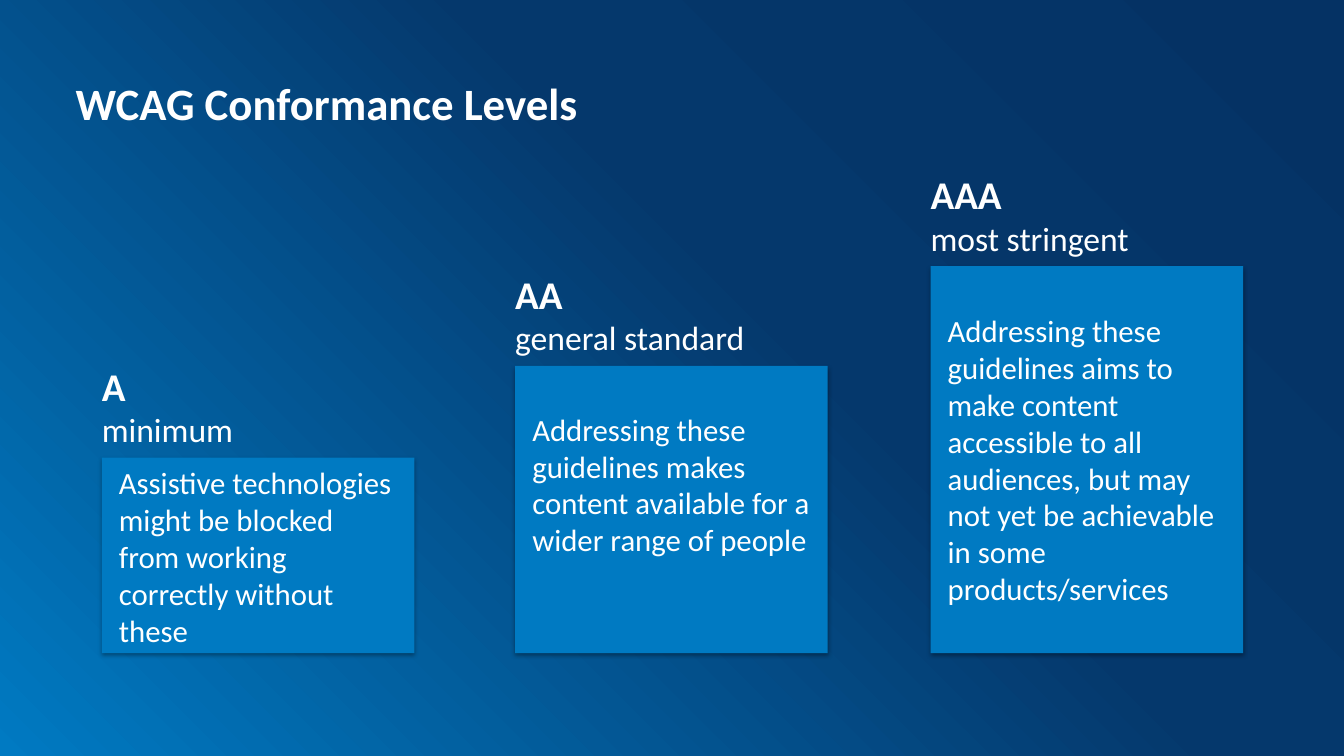
import pptx
import pptx.dml.color
import pptx.enum.shapes
import pptx.enum.text
import pptx.oxml
import pptx.oxml.ns
import pptx.util

Inches = pptx.util.Inches
NAMESPACE = pptx.oxml.ns.nsdecls("a")


def color(value):
    return pptx.dml.color.RGBColor.from_string(value)


class LevelSlide:
    font = "Calibri"
    white = "FFFFFF"
    blue = "007AC2"

    def __init__(self, page):
        self.page = page

    def background(self, stops):
        """Radial gradient spreading from the bottom left corner."""
        self.page.background.fill.gradient()
        gradient = next(self.page._element.iter(pptx.oxml.ns.qn("a:gradFill")))
        stop_xml = "".join(
            f'<a:gs pos="{percent * 1000}"><a:srgbClr val="{value}"/></a:gs>'
            for percent, value in stops)
        gradient.getparent().replace(gradient, pptx.oxml.parse_xml(
            f'<a:gradFill {NAMESPACE} rotWithShape="1"><a:gsLst>{stop_xml}</a:gsLst>'
            '<a:path path="circle"><a:fillToRect t="100000" r="100000"/></a:path>'
            '</a:gradFill>'))

    def block(self, left, top, width, height):
        """Blue rectangle with a soft shadow below."""
        shape = self.page.shapes.add_shape(
            pptx.enum.shapes.MSO_SHAPE.RECTANGLE,
            Inches(left), Inches(top), Inches(width), Inches(height))
        shape.fill.solid()
        shape.fill.fore_color.rgb = color(self.blue)
        shape.line.fill.background()
        shape.shadow.inherit = False
        effects = shape._element.spPr.find(pptx.oxml.ns.qn("a:effectLst"))
        effects.append(pptx.oxml.parse_xml(
            f'<a:outerShdw {NAMESPACE} blurRad="39370" dist="22860" dir="5400000" '
            'rotWithShape="0"><a:srgbClr val="000000"><a:alpha val="35000"/>'
            '</a:srgbClr></a:outerShdw>'))

    def text(self, left, top, width, height, lines):
        """Each line is (wording, size, bold)."""
        box = self.page.shapes.add_textbox(
            Inches(left), Inches(top), Inches(width), Inches(height))
        frame = box.text_frame
        frame.word_wrap = True
        frame.vertical_anchor = pptx.enum.text.MSO_ANCHOR.TOP
        frame.margin_left = frame.margin_right = 0
        frame.margin_top = frame.margin_bottom = 0
        for index, (wording, size, bold) in enumerate(lines):
            para = frame.add_paragraph() if index else frame.paragraphs[0]
            span = para.add_run()
            span.text = wording
            span.font.name = self.font
            span.font.size = pptx.util.Pt(size)
            span.font.bold = bold
            span.font.color.rgb = color(self.white)


def main():
    deck = pptx.Presentation()
    deck.slide_width, deck.slide_height = Inches(13.33), Inches(7.5)
    slide = LevelSlide(deck.slides.add_slide(deck.slide_layouts[6]))
    slide.background([(0, "007AC2"), (58, "05386C"), (100, "053264")])

    # Title
    slide.text(0.75, 0.75, 11.84, 0.54, [("WCAG Conformance Levels", 32, True)])

    # Steps rising from a common base: left, top, text gap, text height, wording
    base, width, label_height, inset = 6.48, 3.1, 0.95, 0.17
    levels = [
        (1.01, 4.54, 0.06, 1.79, "A", "minimum",
         "Assistive technologies might be blocked from working correctly "
         "without these"),
        (5.11, 3.63, 0.44, 1.79, "AA", "general standard",
         "Addressing these guidelines makes content available for a wider "
         "range of people"),
        (9.23, 2.64, 0.45, 3.06, "AAA", "most stringent",
         "Addressing these guidelines aims to make content accessible to all "
         "audiences, but may not yet be achievable in some products/services"),
    ]
    for left, top, gap, height, grade, meaning, detail in levels:
        slide.block(left, top, width, base - top)
        slide.text(left + inset, top + gap, width - 2 * inset, height,
                   [(detail, 22, False)])
        slide.text(left, top - label_height, width, label_height,
                   [(grade, 28, True), (meaning, 24, False)])

    deck.save("out.pptx")


if __name__ == "__main__":
    main()
